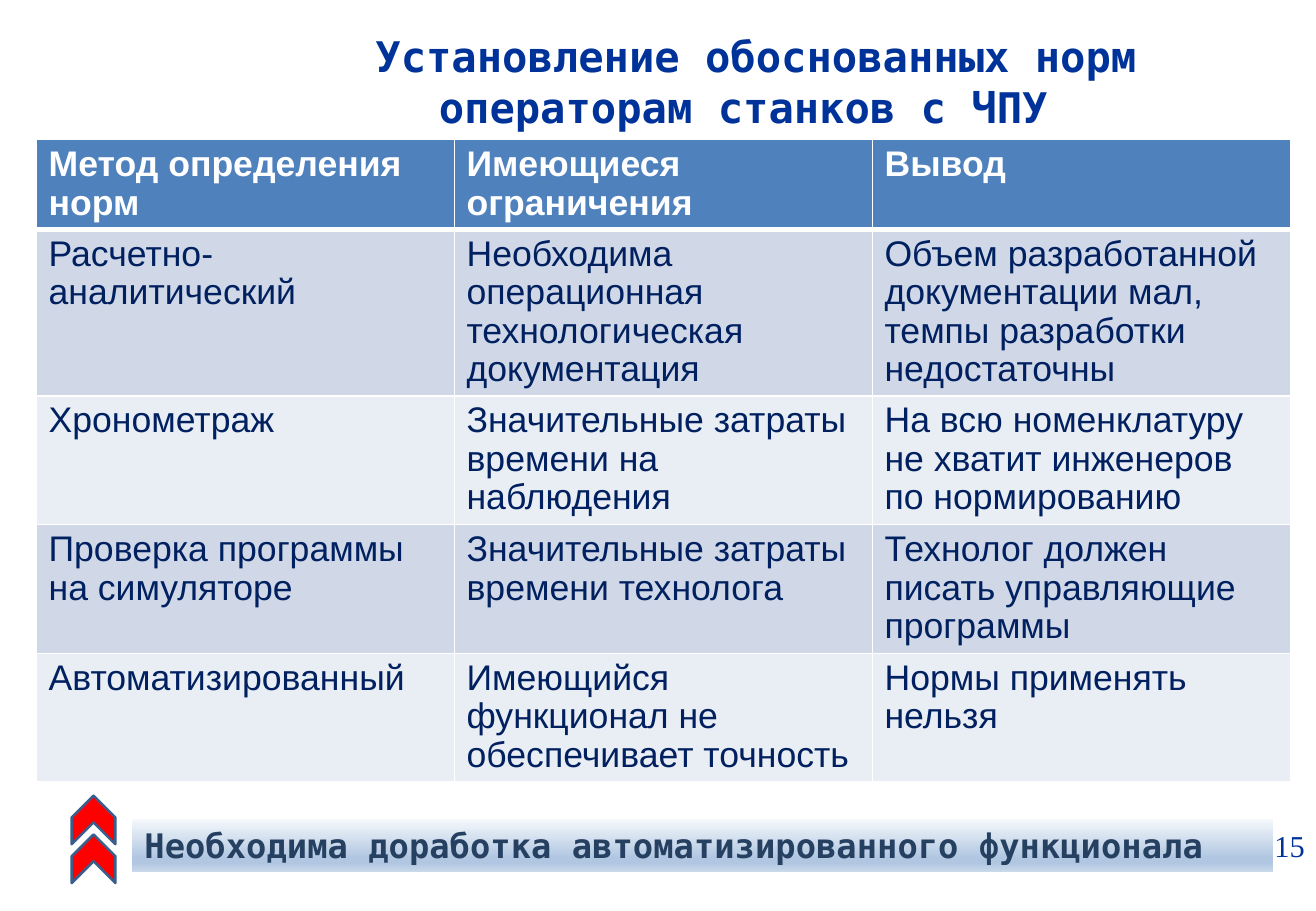
from lxml import etree
from pptx import Presentation
from pptx.dml.color import RGBColor
from pptx.enum.shapes import MSO_SHAPE as SHAPE
from pptx.enum.text import MSO_ANCHOR as ANCHOR, MSO_AUTO_SIZE as AUTO_SIZE, PP_ALIGN as ALIGN
from pptx.oxml.ns import qn
from pptx.util import Inches, Pt

MONO = "DejaVu Sans Mono"
WHITE = "FFFFFF"
NAVY = "003399"
HEADER_FILL = "4F81BD"
BAND_FILLS = ("D0D8E8", "E9EDF4")
COLUMN_WIDTH = 3.44
ROW_HEIGHTS = (0.74, 1.37, 1.06, 1.06, 1.06)
METHODS = (
    ("Метод определения норм", "Имеющиеся ограничения", "Вывод"),
    ("Расчетно-аналитический",
     "Необходима операционная технологическая документация",
     "Объем разработанной документации мал, темпы разработки недостаточны"),
    ("Хронометраж",
     "Значительные затраты времени на наблюдения",
     "На всю номенклатуру не хватит инженеров по нормированию"),
    ("Проверка программы на симуляторе",
     "Значительные затраты времени технолога",
     "Технолог должен писать управляющие программы"),
    ("Автоматизированный",
     "Имеющийся функционал не обеспечивает точность",
     "Нормы применять нельзя"),
)
BAR_STOPS = ((0, "F6F9FC"), (74, "B0C6E1"), (83, "B0C6E1"), (100, "CAD9EB"))


def color(value):
    return RGBColor.from_string(value)


def place(shape, left, top, width, height):
    shape.left, shape.top = Inches(left), Inches(top)
    shape.width, shape.height = Inches(width), Inches(height)


def write(frame, text, size, font_name, font_color, bold=False, align=ALIGN.LEFT):
    frame.text = text
    frame.word_wrap = True
    paragraph = frame.paragraphs[0]
    paragraph.alignment = align
    font = paragraph.runs[0].font
    font.size, font.name, font.bold = Pt(size), font_name, bold
    font.color.rgb = color(font_color)
    return paragraph


def add_color(parent, value):
    etree.SubElement(parent, qn("a:srgbClr"), val=value)


def set_borders(cell, top, bottom):
    properties = cell._tc.get_or_add_tcPr()
    sides = (("a:lnL", 1), ("a:lnR", 1), ("a:lnT", top), ("a:lnB", bottom))
    for position, (side, width) in enumerate(sides):
        border = etree.Element(qn(side), w=str(Pt(width)))
        add_color(etree.SubElement(border, qn("a:solidFill")), WHITE)
        properties.insert(position, border)


def add_title(slide, text):
    title = slide.shapes.title
    place(title, 2.11, 0.2, 8.22, 0.94)
    write(title.text_frame, text, 25, MONO, NAVY, True, ALIGN.CENTER)
    title.text_frame.auto_size = AUTO_SIZE.NONE
    title.text_frame.vertical_anchor = ANCHOR.TOP


def add_methods_table(slide):
    columns = len(METHODS[0])
    table = slide.shapes.add_table(
        len(METHODS), columns, Inches(0.3), Inches(1.15),
        Inches(COLUMN_WIDTH * columns), Inches(sum(ROW_HEIGHTS))).table
    for column in table.columns:
        column.width = Inches(COLUMN_WIDTH)
    for row, (height, texts) in enumerate(zip(ROW_HEIGHTS, METHODS)):
        table.rows[row].height = Inches(height)
        header = row == 0
        for column, text in enumerate(texts):
            cell = table.cell(row, column)
            cell.fill.solid()
            cell.fill.fore_color.rgb = color(HEADER_FILL if header else BAND_FILLS[(row - 1) % 2])
            set_borders(cell, 3 if row == 1 else 1, 3 if header else 1)
            paragraph = write(cell.text_frame, text, 21.1, "Arial",
                              WHITE if header else "002060", header)
            paragraph.line_spacing = 0.97


def add_conclusion(slide, text):
    bar = slide.shapes.add_shape(
        SHAPE.RECTANGLE, Inches(1.09), Inches(6.74), Inches(9.39), Inches(0.44))
    bar.shadow.inherit = False
    bar.line.fill.background()
    bar.fill.gradient()
    bar.fill.gradient_angle = 270
    stops = bar._element.spPr.find(".//" + qn("a:gsLst"))
    for stop in list(stops):
        stops.remove(stop)
    for percent, value in BAR_STOPS:
        add_color(etree.SubElement(stops, qn("a:gs"), pos=str(percent * 1000)), value)
    write(bar.text_frame, text, 20, MONO, "254061", True, ALIGN.JUSTIFY)
    bar.text_frame.vertical_anchor = ANCHOR.MIDDLE


def add_up_chevron(slide, top):
    chevron = slide.shapes.add_shape(
        SHAPE.CHEVRON, Inches(0.57), Inches(top), Inches(0.4), Inches(0.36))
    chevron.rotation = 270
    chevron.shadow.inherit = False
    chevron.fill.solid()
    chevron.fill.fore_color.rgb = color("FF0000")
    chevron.line.color.rgb = color("3A5F8C")
    chevron.line.width = Pt(1.5)


def add_page_number(slide, number):
    page = slide.shapes.add_textbox(Inches(10.39), Inches(6.76), Inches(0.44), Inches(0.4))
    write(page.text_frame, number, 18, "Times New Roman", NAVY)
    page.text_frame.margin_right = 0


def main():
    deck = Presentation()
    deck.slide_width, deck.slide_height = Inches(10.83), Inches(7.5)
    slide = deck.slides.add_slide(deck.slide_layouts.get_by_name("Title Only"))
    add_title(slide, "Установление обоснованных норм операторам станков с ЧПУ ")
    add_methods_table(slide)
    add_conclusion(slide, "Необходима доработка автоматизированного функционала")
    for top in (6.57, 6.89):
        add_up_chevron(slide, top)
    add_page_number(slide, "15")
    deck.save("out.pptx")


if __name__ == "__main__":
    main()
